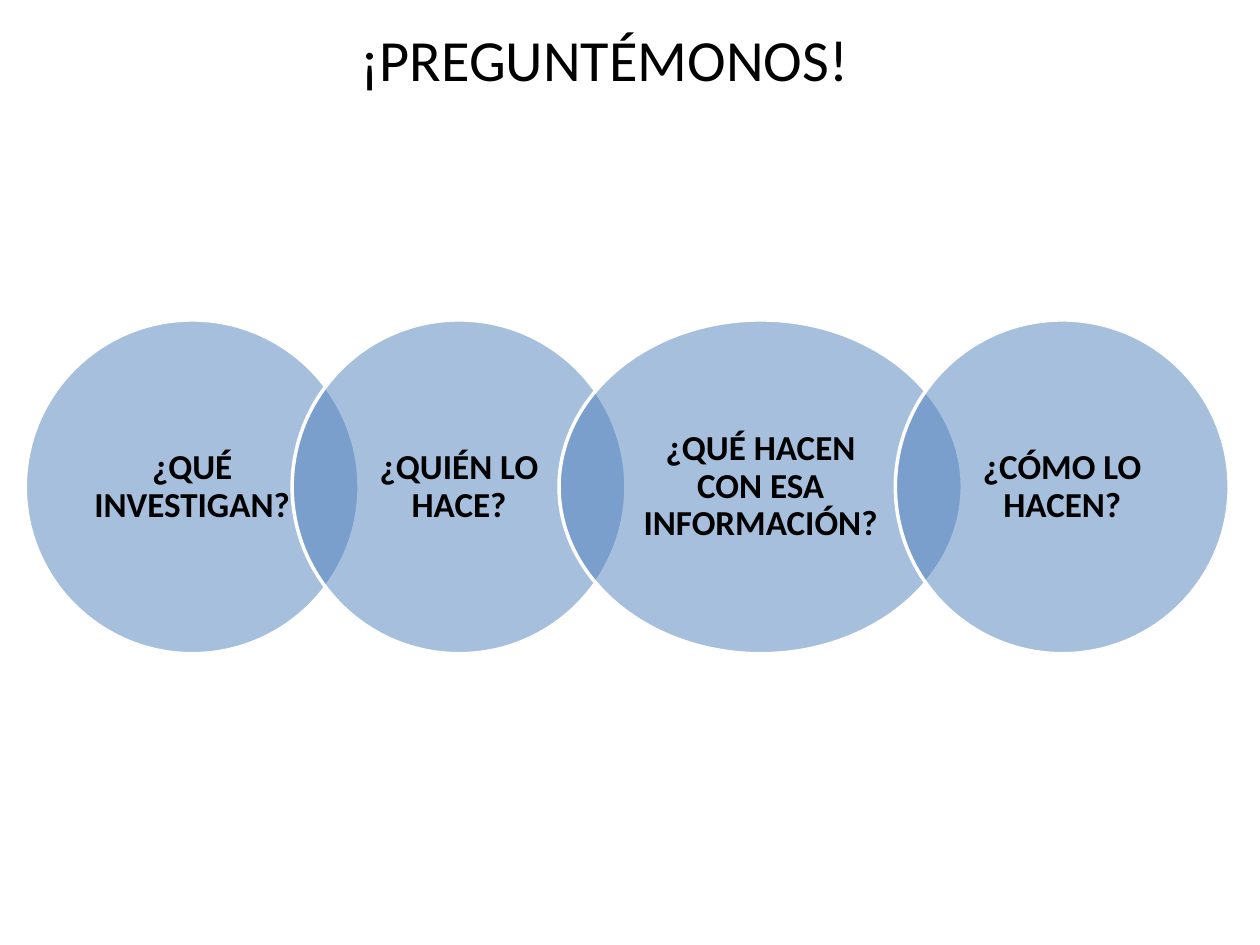
from lxml import etree
from pptx import Presentation
from pptx import util as u
from pptx.dml.color import RGBColor
from pptx.enum import shapes, text
from pptx.oxml import ns

BLACK = RGBColor(0x00, 0x00, 0x00)
WHITE = RGBColor(0xFF, 0xFF, 0xFF)
BLUE = RGBColor(0x4F, 0x81, 0xBD)

TITLE_FONT = {"name": "Calibri", "size": u.Pt(33.3), "bold": False}
QUESTION_FONT = {"name": "Calibri", "size": u.Pt(20), "bold": True}
QUESTION_FRAME = {
    "margin_left": u.Cm(0.36), "margin_right": u.Cm(0.36),
    "margin_top": u.Cm(0.08), "margin_bottom": u.Cm(0.08),
}


def write(frame, wording, font_format, frame_format):
    """Put centred black wording in a text frame."""
    frame.word_wrap = True
    frame.vertical_anchor = text.MSO_ANCHOR.MIDDLE
    for key, value in frame_format.items():
        setattr(frame, key, value)
    paragraph = frame.paragraphs[0]
    paragraph.alignment = text.PP_ALIGN.CENTER
    run = paragraph.add_run()
    run.text = wording
    for key, value in font_format.items():
        setattr(run.font, key, value)
    run.font.color.rgb = BLACK
    return paragraph


deck = Presentation()
deck.slide_width, deck.slide_height = u.Cm(25.4), u.Cm(19.05)
slide = deck.slides.add_slide(deck.slide_layouts[6])

# Heading
heading = slide.shapes.add_textbox(u.Cm(0.76), u.Cm(0), u.Cm(22.86), u.Cm(2.34))
write(heading.text_frame, "¡PREGUNTÉMONOS!", TITLE_FONT, {})

# Chain of overlapping questions
HEIGHT, OVERLAP, TOP = 6.73, 1.35, 6.45
questions = [
    ("¿QUÉ INVESTIGAN?", HEIGHT),
    ("¿QUIÉN LO HACE?", HEIGHT),
    ("¿QUÉ HACEN CON ESA INFORMACIÓN?", 8.13),
    ("¿CÓMO LO HACEN?", HEIGHT),
]
left = 0.51
for wording, width in questions:
    question = slide.shapes.add_shape(
        shapes.MSO_SHAPE.OVAL, u.Cm(left), u.Cm(TOP), u.Cm(width), u.Cm(HEIGHT))
    question.shadow.inherit = False
    question.fill.solid()
    question.fill.fore_color.rgb = BLUE
    question.line.color.rgb = WHITE
    question.line.width = u.Pt(2)

    # Half-transparent fill
    colour = question.fill._xPr.find(ns.qn("a:solidFill"))[0]
    etree.SubElement(colour, ns.qn("a:alpha"), val="50000")

    paragraph = write(question.text_frame, wording, QUESTION_FONT, QUESTION_FRAME)
    paragraph.line_spacing = 0.9
    left += width - OVERLAP

deck.save("out.pptx")
